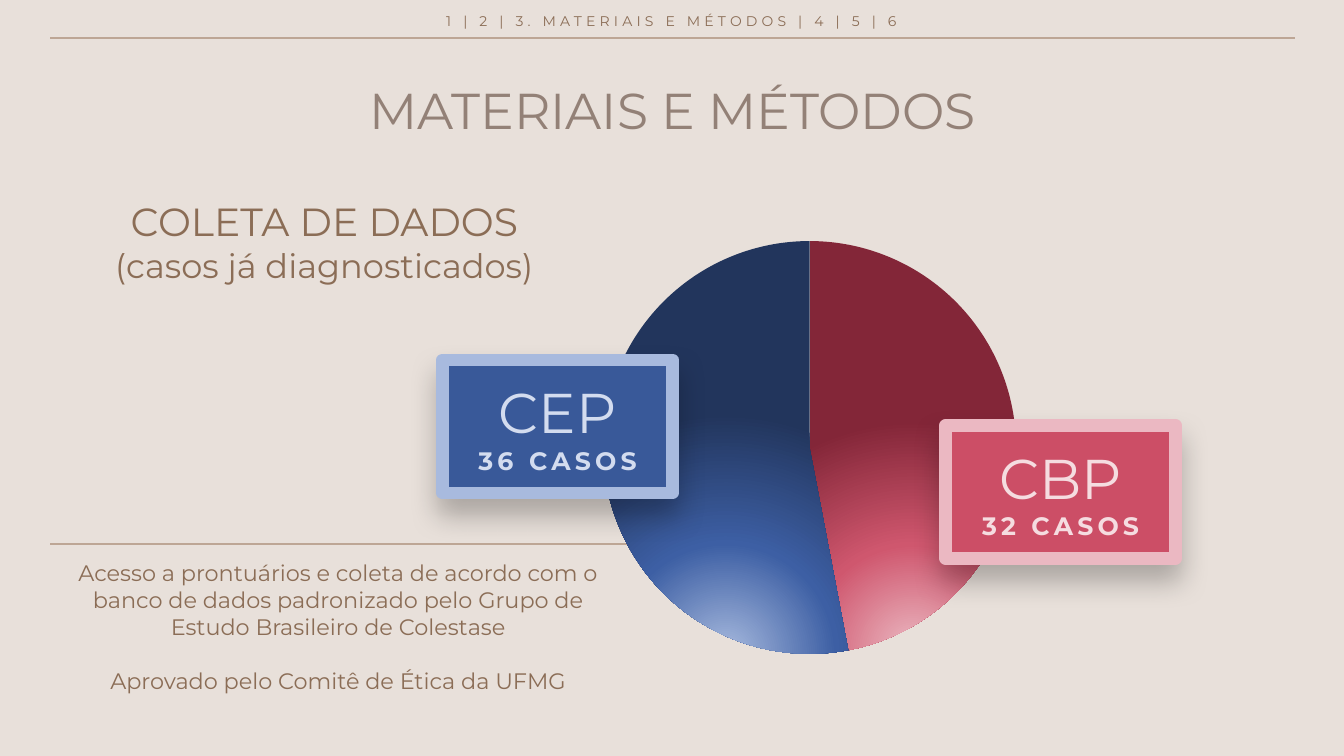
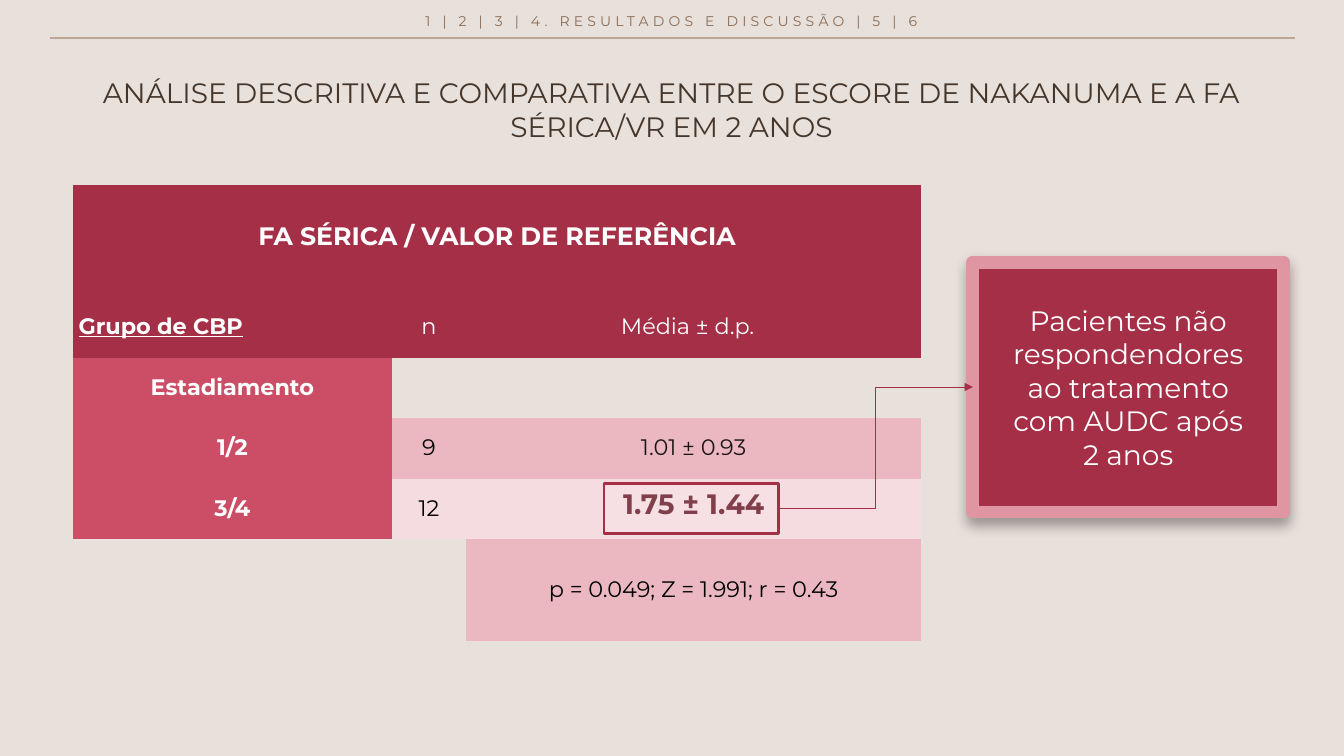
from lxml import etree
from pptx import Presentation
from pptx.chart.data import CategoryChartData
from pptx.dml.color import RGBColor
from pptx.enum.chart import XL_CHART_TYPE
from pptx.enum.shapes import MSO_CONNECTOR, MSO_SHAPE
from pptx.enum.text import MSO_ANCHOR, PP_ALIGN
from pptx.oxml import parse_xml
from pptx.oxml.ns import nsdecls, qn
from pptx.util import Inches, Pt

# Shared look
FONT = "Montserrat"
SAND, RULE, BROWN = "E8E0DA", "BDA695", "8B6D56"
WINE, ROSE, PINK, PALE = "A42F46", "CC4E66", "EBB8C2", "F5DCE0"
WHITE, BLACK = "FFFFFF", "000000"
hue = RGBColor.from_string


def write(frame, lines, ink, bold=False, anchor=MSO_ANCHOR.TOP, wrap=True):
    """Fill a text frame with centred (text, size, letter spacing) lines."""
    frame.word_wrap = wrap
    frame.vertical_anchor = anchor
    for i, (text, size, gap) in enumerate(lines):
        para = frame.add_paragraph() if i else frame.paragraphs[0]
        para.alignment = PP_ALIGN.CENTER
        run = para.add_run()
        run.text = text
        font = para.font
        font.name, font.size, font.bold = FONT, Pt(size), bold
        font.color.rgb = hue(ink)
        if gap:
            run._r.get_or_add_rPr().set("spc", str(gap * 100))


def link(slide, kind, ends, ink, width):
    """Draw a flat connector between two points."""
    line = slide.shapes.add_connector(kind, *map(Inches, ends))
    line.line.color.rgb = hue(ink)
    line.line.width = Pt(width)
    etree.SubElement(line.element.spPr, qn("a:effectLst"))
    return line


deck = Presentation()
deck.slide_width, deck.slide_height = Inches(13.33), Inches(7.5)

# Background, top rule and progress header
heads = ["1 | 2 | 3. MATERIAIS E MÉTODOS | 4 | 5 | 6",
         "1 | 2 | 3 | 4. RESULTADOS E DISCUSSÃO | 5 | 6"]
for head in heads:
    slide = deck.slides.add_slide(deck.slide_layouts[6])
    slide.background.fill.solid()
    slide.background.fill.fore_color.rgb = hue(SAND)
    link(slide, MSO_CONNECTOR.STRAIGHT, (0.5, 0.38, 12.84, 0.38), RULE, 1.5)
    box = slide.shapes.add_textbox(*map(Inches, (0.49, 0.08, 12.34, 0.25)))
    write(box.text_frame, [(head, 10, 3)], BROWN, anchor=MSO_ANCHOR.MIDDLE)
first, second = deck.slides

# Slide 1: title and texts
box = first.shapes.add_textbox(*map(Inches, (0.5, 0.53, 12.34, 1.19)))
write(box.text_frame, [("MATERIAIS E MÉTODOS", 36, 0)], "938177",
      anchor=MSO_ANCHOR.MIDDLE)
box.text_frame.paragraphs[0].line_spacing = 0.9

box = first.shapes.add_textbox(*map(Inches, (1.02, 1.91, 4.39, 0.98)))
write(box.text_frame, [("COLETA DE DADOS", 28, 0),
                       ("(casos já diagnosticados)", 24, 0)], BROWN, wrap=False)

link(first, MSO_CONNECTOR.STRAIGHT, (0.5, 5.4, 6.23, 5.4), RULE, 1.5)
box = first.shapes.add_textbox(*map(Inches, (0.49, 5.5, 5.73, 1.45)))
write(box.text_frame, [
    ("Acesso a prontuários e coleta de acordo com o banco de dados "
     "padronizado pelo Grupo de Estudo Brasileiro de Colestase", 16, 0),
    ("Aprovado pelo Comitê de Ética da UFMG", 16, 0)], BROWN)
box.text_frame.paragraphs[1].space_before = Pt(19.5)

# Slide 1: pie chart
data = CategoryChartData()
data.categories = ["1", "2"]
data.add_series("Series 1", (47, 53))
chart = first.shapes.add_chart(
    XL_CHART_TYPE.PIE, *map(Inches, (5.85, 1.88, 4.36, 5.12)), data).chart
chart.has_title = chart.has_legend = False
chart.font.name, chart.font.size = FONT, Pt(10)
chart.font.color.rgb = hue(BLACK)
pie = chart.plots[0]
pie.vary_by_categories = False
for i in range(2):
    pie.series[0].points[i].format.line.fill.background()

# Radial fills that glow from below the pie
glows = [(PINK, "CF576E", "832638"), ("A8BADE", "3D5FA4", "22355C")]
for part, tones in zip(chart.element.xpath(".//c:dPt/c:spPr"), glows):
    stops = "".join(
        f'<a:gs pos="{at}000"><a:srgbClr val="{tone}"/></a:gs>'
        for at, tone in zip((0, 46, 100), tones))
    part.insert(0, parse_xml(
        f'<a:gradFill {nsdecls("a")} rotWithShape="1"><a:gsLst>{stops}</a:gsLst>'
        '<a:path path="circle"><a:fillToRect l="50000" t="130000" r="50000" '
        'b="-30000"/></a:path></a:gradFill>'))

# Clear chart area and fixed pie size
chart.element.find(qn("c:chart")).addnext(parse_xml(
    f'<c:spPr {nsdecls("c", "a")}><a:noFill/><a:ln><a:noFill/></a:ln></c:spPr>'))
area = chart.element.xpath(".//c:plotArea")[0]
for old in area.findall(qn("c:layout")):
    area.remove(old)
area.insert(0, parse_xml(
    f'<c:layout {nsdecls("c")}><c:manualLayout><c:layoutTarget val="inner"/>'
    '<c:xMode val="edge"/><c:yMode val="edge"/><c:x val="0.03"/>'
    '<c:y val="0.1"/><c:w val="0.94"/><c:h val="0.8"/>'
    '</c:manualLayout></c:layout>'))

# Slide 2: title
box = second.shapes.add_textbox(*map(Inches, (0.49, 0.7, 12.34, 0.77)))
write(box.text_frame, [
    ("ANÁLISE DESCRITIVA E COMPARATIVA ENTRE O ESCORE DE NAKANUMA "
     "E A FA SÉRICA/VR EM 2 ANOS", 20, 0)], "45362B", anchor=MSO_ANCHOR.MIDDLE)

# Slide 2: table, as height, texts and fills of each row
rows = [
    (1.11, ("FA SÉRICA / VALOR DE REFERÊNCIA", "", ""), (WINE, WINE, WINE)),
    (0.6, ("Grupo de CBP", "n", "Média ± d.p."), (WINE, WINE, WINE)),
    (0.6, ("Estadiamento", "", ""), (ROSE, SAND, SAND)),
    (0.6, ("1/2", "9", "1.01 ± 0.93"), (ROSE, PINK, PINK)),
    (0.6, ("3/4", "12", "1.75 ± 1.44"), (ROSE, PALE, PALE)),
    (1.01, ("", "", "p = 0.049; Z = 1.991; r = 0.43"), (SAND, SAND, PINK)),
]
frame = second.shapes.add_table(
    len(rows), 3, *map(Inches, (0.72, 1.84, 8.42, 4.52)))
frame.element.xpath(".//a:tableStyleId")[0].text = (
    "{2D5ABB26-0587-4C30-8999-92F81FD0307C}")
table = frame.table
table.first_row = table.horz_banding = False
for col, width in zip(table.columns, (3.17, 0.73, 4.52)):
    col.width = Inches(width)
for r, (height, texts, fills) in enumerate(rows):
    table.rows[r].height = Inches(height)
    for c, (text, fill) in enumerate(zip(texts, fills)):
        cell = table.cell(r, c)
        cell.fill.solid()
        cell.fill.fore_color.rgb = hue(fill)
        cell.margin_left = cell.margin_right = Inches(0.06)
        cell.margin_top = cell.margin_bottom = 0
        if text:
            write(cell.text_frame, [(text, 16, 0)],
                  WHITE if r < 2 or c == 0 else BLACK, bold=c == 0)
            cell.text_frame.paragraphs[0].line_spacing = Pt(18)
        cell.vertical_anchor = MSO_ANCHOR.MIDDLE
table.cell(0, 0).merge(table.cell(0, 2))
table.cell(1, 2).margin_right = Inches(0.18)

# Cells with their own type
top = table.cell(0, 0).text_frame.paragraphs[0]
top.font.size, top.line_spacing = Pt(18), Pt(15)
group = table.cell(1, 0).text_frame.paragraphs[0]
group.alignment, group.font.underline = PP_ALIGN.JUSTIFY, True
table.cell(3, 2).text_frame.paragraphs[0].font.color.rgb = hue("1C1611")
key = table.cell(4, 2).text_frame.paragraphs[0].font
key.size, key.bold = Pt(20), True
key.color.rgb = hue("6D202E")

# Slide 2: frame around the key value
mark = second.shapes.add_shape(
    MSO_SHAPE.RECTANGLE, *map(Inches, (5.99, 4.8, 1.73, 0.49)))
mark.fill.solid()
mark.fill.fore_color.rgb = hue(WHITE)
tint = mark.element.spPr.find(".//" + qn("a:srgbClr"))
etree.SubElement(tint, qn("a:alpha")).set("val", "14000")
mark.line.color.rgb = hue(WINE)
mark.line.width = Pt(2)
mark.shadow.inherit = False

# Framed cards: slide, place, fill, edge, edge width, ink, lines, shadow, inset
soft, tight = (25, 20, 12), (32, 9, 5)
cards = [
    (first, (9.38, 4.22, 2.28, 1.32), ROSE, PINK, 9, PALE,
     [("CBP", 40, 0), ("32 CASOS", 18, 3)], soft, 0.1),
    (first, (4.39, 3.57, 2.28, 1.32), "395999", "A8BADE", 9, "D3DCEF",
     [("CEP", 40, 0), ("36 CASOS", 18, 3)], soft, 0.1),
    (second, (9.65, 2.6, 3.08, 2.48), WINE, "E095A3", 9.25, WHITE,
     [("Pacientes não respondendores ao tratamento com AUDC após 2 anos",
       20, 0)], tight, 0.39),
]
for slide, place, fill, edge, width, ink, lines, shade, inset in cards:
    card = slide.shapes.add_shape(MSO_SHAPE.RECTANGLE, *map(Inches, place))
    card.fill.solid()
    card.fill.fore_color.rgb = hue(fill)
    card.line.color.rgb = hue(edge)
    card.line.width = Pt(width)
    card.shadow.inherit = False
    alpha, blur, drop = shade
    card.element.spPr.find(qn("a:effectLst")).append(parse_xml(
        f'<a:outerShdw {nsdecls("a")} blurRad="{Pt(blur)}" dist="{Pt(drop)}" '
        f'dir="5400000" algn="t" rotWithShape="0"><a:srgbClr val="{BLACK}">'
        f'<a:alpha val="{alpha}000"/></a:srgbClr></a:outerShdw>'))
    text = card.text_frame
    text.margin_left = text.margin_right = Inches(inset)
    write(text, lines, ink, anchor=MSO_ANCHOR.MIDDLE)
    for para in text.paragraphs[1:]:
        para.font.bold = True

# Slide 2: arrow from the key value to the card
arrow = link(second, MSO_CONNECTOR.ELBOW, (7.72, 5.04, 9.65, 3.84), WINE, 0.5)
tip = etree.SubElement(arrow.element.spPr.find(qn("a:ln")), qn("a:tailEnd"))
tip.set("type", "triangle")

deck.save("out.pptx")
